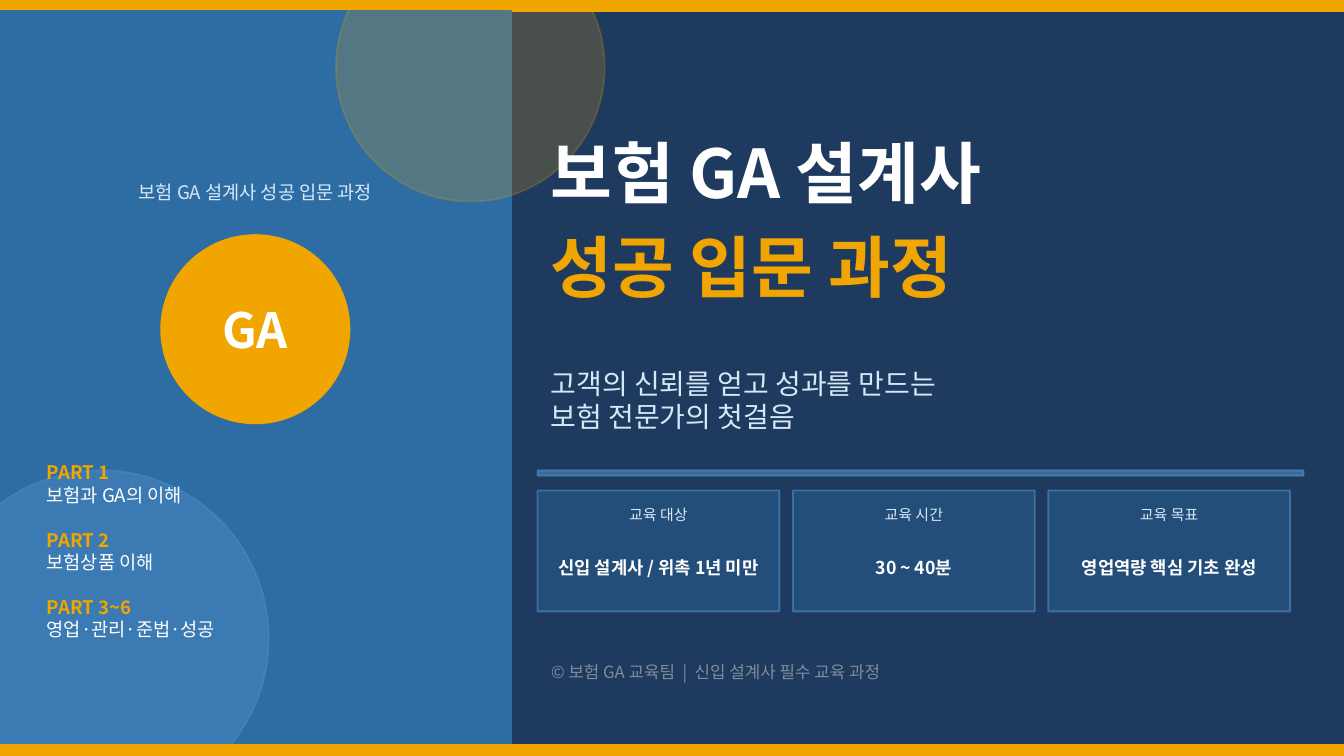
import pptx
import pptx.dml.color
import pptx.enum.shapes
import pptx.enum.text
import pptx.oxml
import pptx.oxml.ns
import pptx.util
from pptx.util import Inches

WIDTH, BAR = 10, 0.08
HEIGHT = WIDTH * 9 / 16
FONT = "Noto Sans CJK KR"
NAVY, BLUE, SKY, PALE = "1E3A5F", "2E6DA4", "5B9BD5", "D6E8F8"
GOLD, WHITE, GRAY = "F0A500", "FFFFFF", "7F8C9A"
RECTANGLE = pptx.enum.shapes.MSO_SHAPE.RECTANGLE
OVAL = pptx.enum.shapes.MSO_SHAPE.OVAL
LEFT = pptx.enum.text.PP_ALIGN.LEFT
CENTER = pptx.enum.text.PP_ALIGN.CENTER

PARTS = [
    ("PART 1", "보험과 GA의 이해"),
    ("PART 2", "보험상품 이해"),
    ("PART 3~6", "영업·관리·준법·성공"),
]
CARDS = [
    ("교육 대상", "신입 설계사 / 위촉 1년 미만"),
    ("교육 시간", "30 ~ 40분"),
    ("교육 목표", "영업역량 핵심 기초 완성"),
]


def set_color(fill, color, opacity=100):
    """Make a fill solid in a hex colour with an opacity in percent."""
    fill.solid()
    fill.fore_color.rgb = pptx.dml.color.RGBColor.from_string(color)
    if opacity < 100:
        solid = fill._xPr.find(pptx.oxml.ns.qn("a:solidFill"))
        alpha = pptx.oxml.parse_xml(
            f'<a:alpha {pptx.oxml.ns.nsdecls("a")} val="{opacity * 1000}"/>')
        solid[0].append(alpha)


def add_panel(page, kind, area, color, opacity=100, edge=None, edge_opacity=None):
    """Add a filled shape whose outline follows the fill unless told otherwise."""
    shape = page.shapes.add_shape(kind, *map(Inches, area))
    shape.shadow.inherit = False
    set_color(shape.fill, color, opacity)
    shape.line.width = pptx.util.Pt(1)
    set_color(shape.line.fill, edge or color, edge_opacity or opacity)


def add_span(para, text, size, color, bold=False):
    """Add one run of text in the slide font."""
    span = para.add_run()
    span.text = text
    span.font.name = FONT
    span.font.size = pptx.util.Pt(size)
    span.font.bold = bold
    set_color(span.font.fill, color)
    east_asian = pptx.oxml.parse_xml(
        f'<a:ea {pptx.oxml.ns.nsdecls("a")} typeface="{FONT}"/>')
    span.font._element.find(pptx.oxml.ns.qn("a:latin")).addnext(east_asian)


def add_text(page, area, lines, size, align=LEFT, gap=0):
    """Add a text box of (text, colour, bold) lines, with a gap before later bold ones."""
    box = page.shapes.add_textbox(*map(Inches, area))
    frame = box.text_frame
    frame.word_wrap = True
    frame.vertical_anchor = pptx.enum.text.MSO_ANCHOR.MIDDLE
    for index, (text, color, bold) in enumerate(lines):
        para = frame.add_paragraph() if index else frame.paragraphs[0]
        para.alignment = align
        if gap and index and bold:
            para.space_before = pptx.util.Pt(gap)
        add_span(para, text, size, color, bold)


def add_card(page, left, label, value):
    """Add one course fact card."""
    add_panel(page, RECTANGLE, (left, 3.65, 1.8, 0.9), BLUE, 40, SKY, 50)
    add_text(page, (left, 3.68, 1.8, 0.3), [(label, PALE, False)], 8, CENTER)
    add_text(page, (left, 3.95, 1.8, 0.55), [(value, WHITE, True)], 9.5, CENTER)


def add_side(page):
    """Add the left panel with its circles, badge and part list."""
    add_panel(page, RECTANGLE, (0, BAR, 3.8, HEIGHT - BAR), BLUE)
    add_panel(page, OVAL, (-0.5, 3.5, 2.5, 2.5), SKY, 30)
    add_panel(page, OVAL, (2.5, -0.5, 2, 2), GOLD, 20)
    add_text(page, (0.15, 1.2, 3.5, 0.45),
             [("보험 GA 설계사 성공 입문 과정", PALE, False)], 10, CENTER)
    badge = (1.2, 1.75, 1.4, 1.4)
    add_panel(page, OVAL, badge, GOLD)
    add_text(page, badge, [("GA", WHITE, True)], 26, CENTER)
    lines = []
    for part, topic in PARTS:
        lines += [(part, GOLD, True), (topic, WHITE, False)]
    add_text(page, (0.25, 3.1, 3.3, 2), lines, 10, gap=12)


def add_main(page):
    """Add the title, subtitle, cards and copyright line."""
    add_text(page, (4, 0.9, 5.7, 0.75), [("보험 GA 설계사", WHITE, True)], 36)
    add_text(page, (4, 1.6, 5.7, 0.75), [("성공 입문 과정", GOLD, True)], 36)
    add_text(page, (4, 2.55, 5.7, 0.85),
             [("고객의 신뢰를 얻고 성과를 만드는", PALE, False),
              ("보험 전문가의 첫걸음", PALE, False)], 15)
    add_panel(page, RECTANGLE, (4, 3.5, 5.7, 0.04), SKY, 50)
    for index, (label, value) in enumerate(CARDS):
        add_card(page, 4 + 1.9 * index, label, value)
    add_text(page, (4, 4.8, 5.7, 0.4),
             [("© 보험 GA 교육팀  |  신입 설계사 필수 교육 과정", GRAY, False)], 9)


def main():
    """Build the cover slide and save it."""
    deck = pptx.Presentation()
    deck.slide_width, deck.slide_height = Inches(WIDTH), Inches(HEIGHT)
    page = deck.slides.add_slide(deck.slide_layouts[6])
    set_color(page.background.fill, NAVY)
    add_panel(page, RECTANGLE, (0, 0, WIDTH, BAR), GOLD)
    add_side(page)
    add_main(page)
    add_panel(page, RECTANGLE, (0, HEIGHT - BAR, WIDTH, BAR), GOLD)
    deck.save("out.pptx")


if __name__ == "__main__":
    main()
